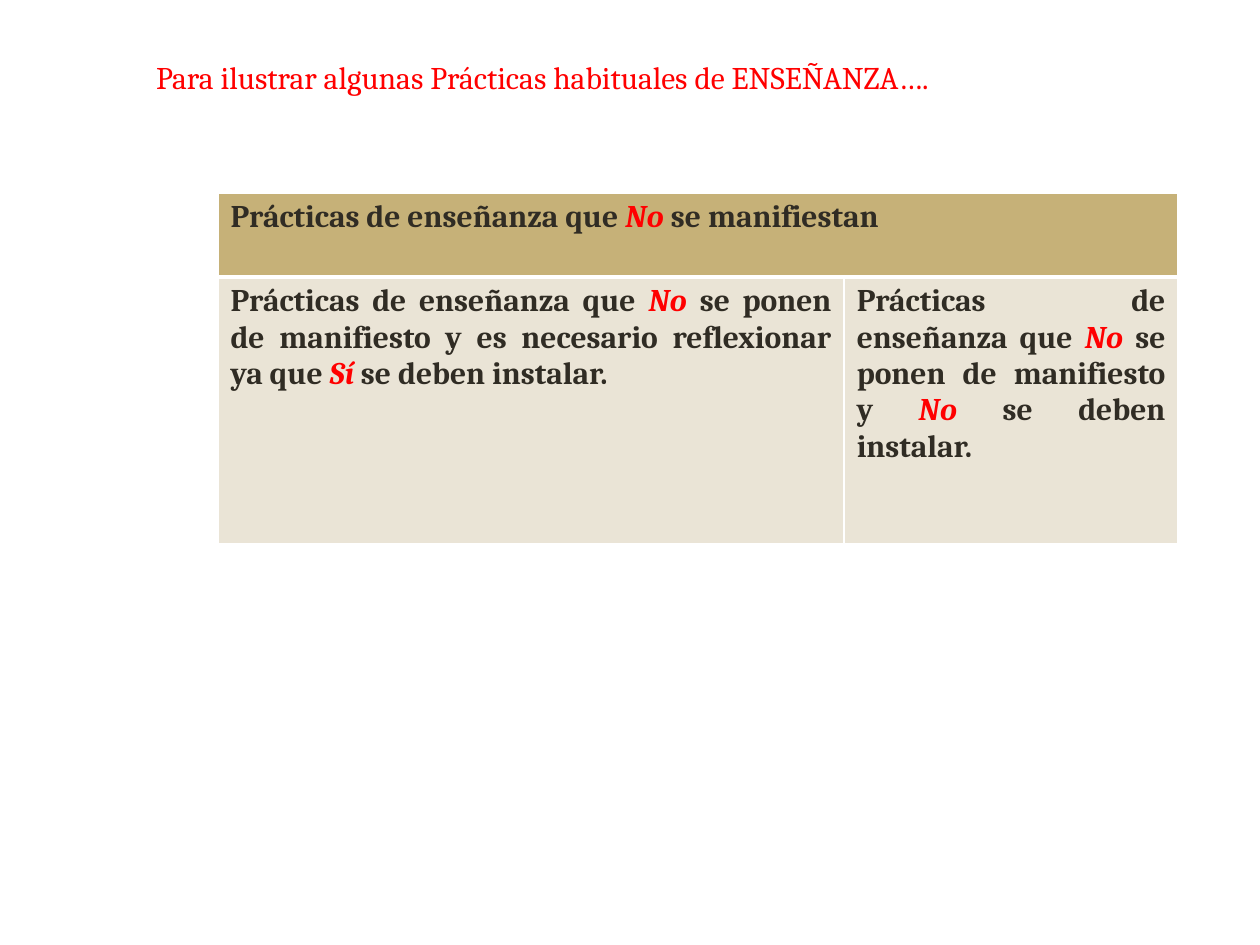
from pptx import Presentation
from pptx import util as u
from pptx.dml import color
from pptx.enum import text
from pptx.oxml import ns
from lxml import etree

COLORS = {
    "red": "FF0000",
    "ink": "302C24",
    "header": "C6B178",
    "body": "EAE4D6",
    "border": "FFFFFF",
}
TITLE = "Para ilustrar algunas Prácticas habituales de ENSEÑANZA…."
HEADING = "Prácticas de enseñanza que *No* se manifiestan"
REFLECTIONS = [
    "Prácticas de enseñanza que *No* se ponen de manifiesto y es necesario "
    "reflexionar ya que *Sí* se deben instalar.",
    "Prácticas de enseñanza que *No* se ponen de manifiesto y *No* se deben instalar.",
]
COLUMN_WIDTHS = [4.97, 2.65]
ROW_HEIGHTS = [0.67, 2.12]
THIN, THICK = 1, 3


def rgb(name):
    return color.RGBColor.from_string(COLORS[name])


def add_run(paragraph, wording, color_name, **styles):
    run = paragraph.add_run()
    run.text = wording
    font_values = {"name": "Cambria", "size": u.Pt(18), **styles}
    for attribute, value in font_values.items():
        setattr(run.font, attribute, value)
    run.font.color.rgb = rgb(color_name)


def add_marked_text(paragraph, wording):
    """Write bold text in which *words between asterisks* are red italics."""
    for index, part in enumerate(wording.split("*")):
        stressed = index % 2 == 1
        add_run(paragraph, part, "red" if stressed else "ink",
                bold=True, italic=stressed)


def set_borders(cell, top, bottom):
    properties = cell._tc.get_or_add_tcPr()
    for side, points in {"L": THIN, "R": THIN, "T": top, "B": bottom}.items():
        line = etree.SubElement(properties, ns.qn(f"a:ln{side}"), w=str(u.Pt(points)))
        fill = etree.SubElement(line, ns.qn("a:solidFill"))
        etree.SubElement(fill, ns.qn("a:srgbClr"), val=COLORS["border"])


def style_cell(cell, fill_name, top, bottom):
    set_borders(cell, top, bottom)
    cell.fill.solid()
    cell.fill.fore_color.rgb = rgb(fill_name)


def add_title(slide, left, top, width, height):
    frame = slide.shapes.add_textbox(left, top, width, height).text_frame
    frame.word_wrap = True
    add_run(frame.paragraphs[0], TITLE, "red")


def add_practices_table(slide, left, top, width, height):
    table = slide.shapes.add_table(
        len(ROW_HEIGHTS), len(COLUMN_WIDTHS), left, top, width, height).table
    for column, column_width in zip(table.columns, COLUMN_WIDTHS):
        column.width = u.Inches(column_width)
    for row, row_height in zip(table.rows, ROW_HEIGHTS):
        row.height = u.Inches(row_height)

    heading = table.cell(0, 0)
    heading.merge(table.cell(0, len(COLUMN_WIDTHS) - 1))
    add_marked_text(heading.text_frame.paragraphs[0], HEADING)
    for index, reflection in enumerate(REFLECTIONS):
        style_cell(table.cell(0, index), "header", THIN, THICK)
        cell = table.cell(1, index)
        style_cell(cell, "body", THICK, THIN)
        paragraph = cell.text_frame.paragraphs[0]
        paragraph.alignment = text.PP_ALIGN.JUSTIFY
        add_marked_text(paragraph, reflection)


def main():
    presentation = Presentation()
    presentation.slide_width = u.Inches(10)
    presentation.slide_height = u.Inches(7.5)
    slide = presentation.slides.add_slide(presentation.slide_layouts[6])
    add_practices_table(slide, u.Inches(1.73), u.Inches(1.53),
                        u.Inches(sum(COLUMN_WIDTHS)), u.Inches(sum(ROW_HEIGHTS)))
    add_title(slide, u.Inches(1.14), u.Inches(0.41), u.Inches(7.68), u.Inches(0.4))
    presentation.save("out.pptx")


if __name__ == "__main__":
    main()
